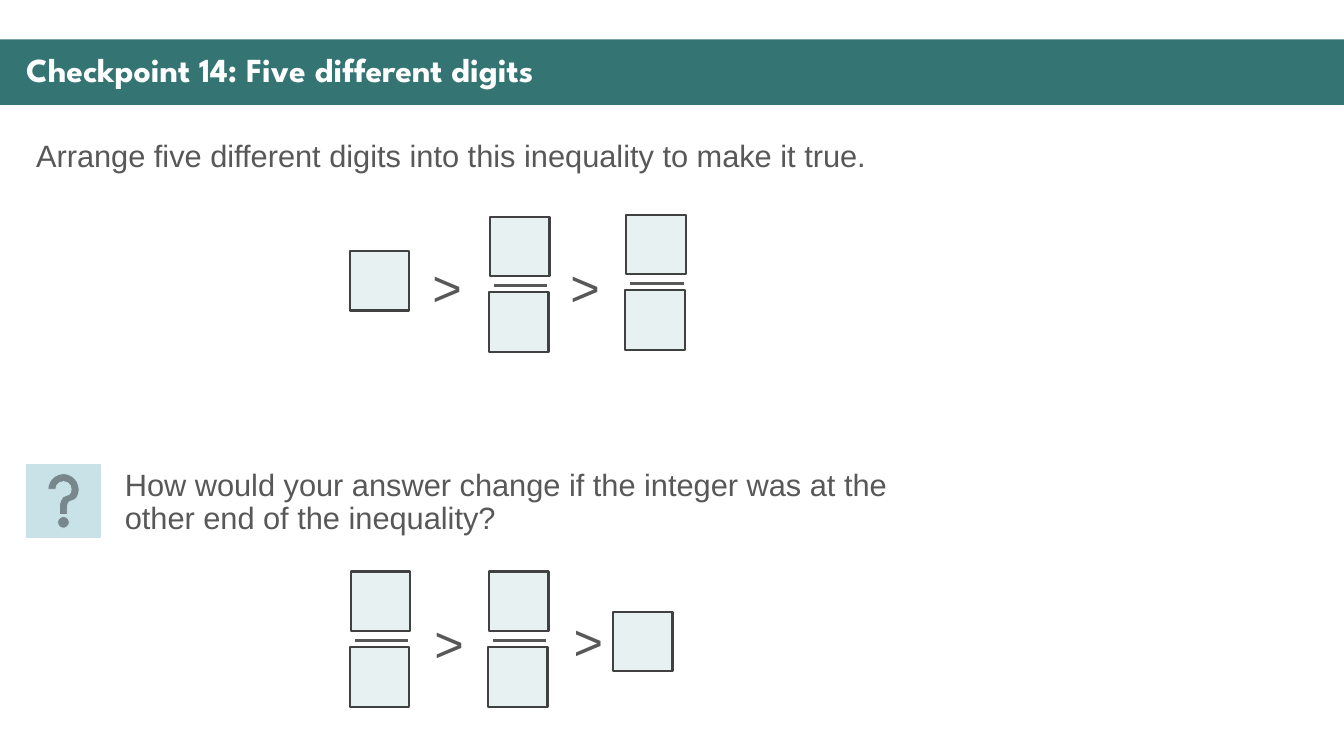
from dataclasses import dataclass

from lxml import etree
from pptx import Presentation
from pptx.dml.color import RGBColor
from pptx.enum.shapes import MSO_CONNECTOR, MSO_SHAPE
from pptx.enum.text import MSO_ANCHOR, MSO_AUTO_SIZE, PP_ALIGN
from pptx.oxml.ns import qn
from pptx.shapes.autoshape import Shape
from pptx.shapes.shapetree import GroupShapes, SlideShapes
from pptx.text.text import TextFrame
from pptx.util import Emu, Pt

RECTANGLE = MSO_SHAPE.RECTANGLE
HELP_BUTTON = MSO_SHAPE.ACTION_BUTTON_HELP
STRAIGHT = MSO_CONNECTOR.STRAIGHT
TOP, MIDDLE = MSO_ANCHOR.TOP, MSO_ANCHOR.MIDDLE
FIXED, GROW = MSO_AUTO_SIZE.NONE, MSO_AUTO_SIZE.SHAPE_TO_FIT_TEXT
LEFT = PP_ALIGN.LEFT

EMU_PER_PX = 9144
SLIDE_WIDTH, SLIDE_HEIGHT = 1333, 750
DIGIT_SIZE = 59
SIGN_WIDTH, SIGN_HEIGHT = 50, 71
BAR_INDENT, BAR_DROP, BAR_LENGTH = 5, 68, 53
NUMERATOR_INDENT, DENOMINATOR_DROP = 1, 75

TEAL, PALE_BLUE, PALE_GREEN = "347574", "C8E2E8", "E8F1F1"
WHITE, TEXT_GREY, OUTLINE_GREY = "FFFFFF", "585858", "414141"
TITLE_FONT, BODY_FONT = "League Spartan", "Arial"


@dataclass(frozen=True)
class Place:
    left: int
    top: int


@dataclass(frozen=True)
class Inequality:
    integer: Place
    fractions: tuple[Place, ...]
    signs: tuple[Place, ...]


@dataclass(frozen=True)
class Prompt:
    wording: str
    left: int
    top: int
    width: int
    height: int


INEQUALITIES = (
    Inequality(Place(347, 249), (Place(485, 215), Place(620, 213)),
               (Place(419, 249), Place(556, 249))),
    Inequality(Place(608, 607), (Place(347, 567), Place(484, 567)),
               (Place(421, 602), Place(559, 600))),
)
PROMPTS = (
    Prompt("Arrange five different digits into this inequality to make it true.",
           26, 135, 857, 233),
    Prompt("How would your answer change if the integer was at the other end "
           "of the inequality?", 114, 461, 830, 200),
)


def px(length: int) -> Emu:
    return Emu(length * EMU_PER_PX)


def color(hex_value: str) -> RGBColor:
    return RGBColor.from_string(hex_value)


def write(frame: TextFrame, wording: str, size: int, font_name: str,
          font_color: str, bold: bool = False) -> None:
    frame.text = wording
    paragraph = frame.paragraphs[0]
    paragraph.alignment = LEFT
    font = paragraph.runs[0].font
    font.name, font.size, font.bold = font_name, Pt(size), bold
    font.color.rgb = color(font_color)


def draw_box(shapes: SlideShapes | GroupShapes, preset: MSO_SHAPE, left: int,
             top: int, width: int, height: int, fill: str,
             outline: str | None = None, outline_width: float = 0) -> Shape:
    box = shapes.add_shape(preset, px(left), px(top), px(width), px(height))
    box.shadow.inherit = False
    box.fill.solid()
    box.fill.fore_color.rgb = color(fill)
    if outline:
        box.line.color.rgb = color(outline)
        box.line.width = Pt(outline_width)
    else:
        box.line.fill.background()
    return box


def draw_digit(shapes: GroupShapes, left: int, top: int) -> None:
    draw_box(shapes, RECTANGLE, left, top, DIGIT_SIZE, DIGIT_SIZE,
             PALE_GREEN, OUTLINE_GREY, 1.5)


def draw_fraction(shapes: GroupShapes, place: Place) -> None:
    bar_left, bar_top = place.left + BAR_INDENT, place.top + BAR_DROP
    bar = shapes.add_connector(STRAIGHT, px(bar_left), px(bar_top),
                               px(bar_left + BAR_LENGTH), px(bar_top))
    bar.line.color.rgb = color(TEXT_GREY)
    bar.line.width = Pt(2.25)
    etree.SubElement(bar._element.spPr, qn("a:effectLst"))
    draw_digit(shapes, place.left + NUMERATOR_INDENT, place.top)
    draw_digit(shapes, place.left, place.top + DENOMINATOR_DROP)


def draw_sign(shapes: GroupShapes, place: Place) -> None:
    sign = shapes.add_textbox(px(place.left), px(place.top),
                              px(SIGN_WIDTH), px(SIGN_HEIGHT))
    frame = sign.text_frame
    frame.word_wrap = False
    frame.auto_size = GROW
    write(frame, ">", 36, BODY_FONT, TEXT_GREY)


def draw_inequality(shapes: SlideShapes, inequality: Inequality) -> None:
    members = shapes.add_group_shape().shapes
    for fraction in inequality.fractions:
        draw_fraction(members, fraction)
    for sign in inequality.signs:
        draw_sign(members, sign)
    draw_digit(members, inequality.integer.left, inequality.integer.top)


def draw_prompt(shapes: SlideShapes, prompt: Prompt) -> None:
    question = shapes.add_textbox(px(prompt.left), px(prompt.top),
                                  px(prompt.width), px(prompt.height))
    frame = question.text_frame
    frame.word_wrap = True
    frame.vertical_anchor = TOP
    write(frame, prompt.wording, 22, BODY_FONT, TEXT_GREY)
    frame.paragraphs[0].line_spacing = 0.9


def draw_heading(shapes: SlideShapes) -> None:
    band = draw_box(shapes, RECTANGLE, 0, 39, SLIDE_WIDTH, 65, TEAL)
    heading = shapes.title
    heading.left, heading.top = px(16), px(48)
    heading.width, heading.height = px(1304), px(47)
    frame = heading.text_frame
    frame.word_wrap = True
    frame.auto_size = FIXED
    frame.vertical_anchor = MIDDLE
    write(frame, "Checkpoint 14: Five different digits", 24, TITLE_FONT,
          WHITE, bold=True)
    frame.paragraphs[0].line_spacing = 0.9
    heading._element.addprevious(band._element)


def main() -> None:
    deck = Presentation()
    deck.slide_width, deck.slide_height = px(SLIDE_WIDTH), px(SLIDE_HEIGHT)
    title_only = deck.slide_layouts.get_by_name("Title Only")
    shapes = deck.slides.add_slide(title_only).shapes
    draw_heading(shapes)
    draw_box(shapes, HELP_BUTTON, 26, 461, 74, 72, PALE_BLUE, PALE_BLUE, 0.5)
    for prompt in PROMPTS:
        draw_prompt(shapes, prompt)
    for inequality in INEQUALITIES:
        draw_inequality(shapes, inequality)
    deck.save("out.pptx")


if __name__ == "__main__":
    main()
